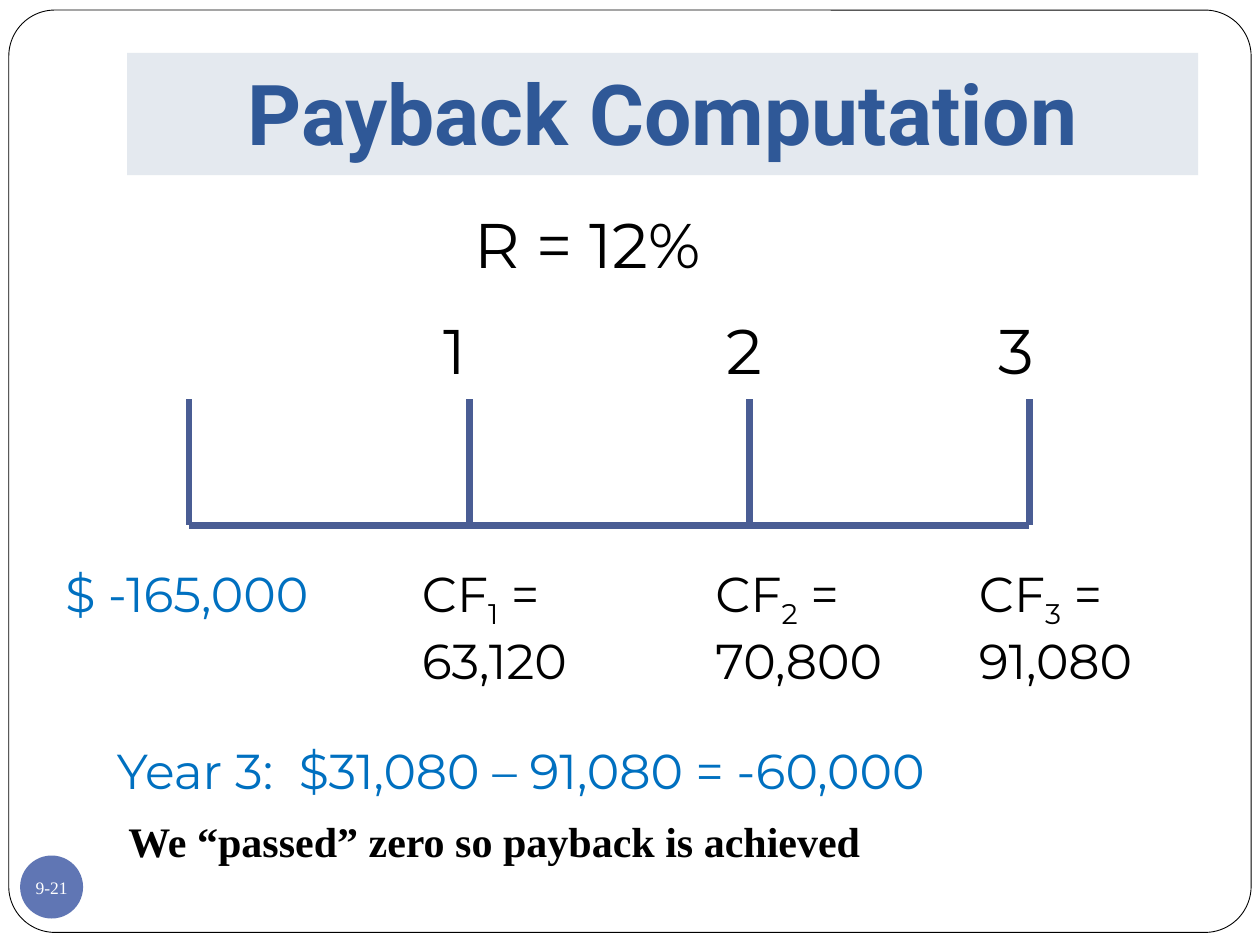
from lxml import etree
from pptx import Presentation
from pptx.dml.color import RGBColor
from pptx.enum.shapes import MSO_CONNECTOR, MSO_SHAPE
from pptx.enum.text import MSO_ANCHOR, PP_ALIGN
from pptx.oxml.ns import qn
from pptx.util import Inches, Pt

COLORS = {
    "white": "FFFFFF", "black": "000000", "badge": "6076B4", "band": "E4E9EF",
    "title": "2F5897", "accent": "0070C0", "axis": "4A5D94",
}
BODY = {"name": "Montserrat", "size": Pt(28)}
LARGE = {"name": "Montserrat", "size": Pt(36)}
TITLE = {"name": "Roboto", "size": Pt(48), "bold": True}
NOTE = {"name": "Times New Roman", "size": Pt(24), "bold": True}
NUMBER = {"name": "Times New Roman", "size": Pt(10)}


def rgb(name):
    return RGBColor.from_string(COLORS[name])


def add_run(p, text, font, color="black", subscript=False):
    r = p.add_run()
    r.text = text
    for key, value in font.items():
        setattr(r.font, key, value)
    r.font.color.rgb = rgb(color)
    if subscript:
        r._r.get_or_add_rPr().set("baseline", "-25000")


def add_text(s, box, text, font, color="black"):
    tf = s.shapes.add_textbox(*map(Inches, box)).text_frame
    tf.word_wrap = True
    p = tf.paragraphs[0]
    if text:
        add_run(p, text, font, color)
    return p


def add_filled(s, kind, box, fill):
    sp = s.shapes.add_shape(kind, *map(Inches, box))
    sp.shadow.inherit = False
    sp.fill.solid()
    sp.fill.fore_color.rgb = rgb(fill)
    sp.line.fill.background()
    return sp


def add_line(s, x1, y1, x2, y2):
    line = s.shapes.add_connector(
        MSO_CONNECTOR.STRAIGHT, *map(Inches, (x1, y1, x2, y2)))
    line.line.color.rgb = rgb("axis")
    line.line.width = Pt(4)
    etree.SubElement(line._element.spPr, qn("a:effectLst"))


def add_frame(s, box):
    sp = add_filled(s, MSO_SHAPE.ROUNDED_RECTANGLE, box, "white")
    sp.adjustments[0] = 0.05
    sp.line.color.rgb = rgb("black")
    sp.line.width = Pt(0.5)


def add_label(s, kind, box, fill, text, font, color, frame):
    """Filled shape with one centred line of text."""
    tf = add_filled(s, kind, box, fill).text_frame
    for key, value in frame.items():
        setattr(tf, key, value)
    p = tf.paragraphs[0]
    p.alignment = PP_ALIGN.CENTER
    add_run(p, text, font, color)


def add_badge(s, box):
    frame = dict.fromkeys(
        ("margin_left", "margin_top", "margin_right", "margin_bottom"), 0)
    frame.update(word_wrap=False, vertical_anchor=MSO_ANCHOR.MIDDLE)
    add_label(s, MSO_SHAPE.OVAL, box, "badge", "9-21", NUMBER, "white", frame)


def add_title(s, box):
    frame = {"word_wrap": True, "vertical_anchor": MSO_ANCHOR.BOTTOM,
             "margin_bottom": Inches(0.1)}
    add_label(s, MSO_SHAPE.RECTANGLE, box, "band", "Payback Computation",
              TITLE, "title", frame)


def add_timeline(s, box):
    left, top, width, height = box
    base = top + height
    # Axis with equally spaced ticks
    add_line(s, left, base, left + width, base)
    for i in range(4):
        x = left + i * width / 3
        add_line(s, x, top, x, base)

    # Initial outlay, then year numbers above and cash flows below
    add_text(s, (left - 1.08, base + 0.25, 2.42, 0.57), "$ -165,000", BODY, "accent")
    years = [  # year x, cash flow x, cash flow width, amount
        (1.92, 1.75, 2.33, "63,120"),
        (4.17, 4.08, 1.67, "70,800"),
        (6.33, 6.17, 1.75, "91,080"),
    ]
    for year, (year_x, flow_x, flow_w, amount) in enumerate(years, 1):
        add_text(s, (left + year_x, top - 0.75, 0.83, 0.71), str(year), LARGE)
        p = add_text(s, (left + flow_x, base + 0.25, flow_w, 1.04), "", BODY)
        add_run(p, "CF", BODY)
        add_run(p, str(year), BODY, subscript=True)
        add_run(p, f" = {amount}", BODY)


def add_conclusion(s, box):
    left, top, width, height = box
    add_text(s, (left, top, width, 0.57),
             "Year 3:  $31,080 – 91,080 = -60,000", BODY, "accent")
    add_text(s, (left + 0.09, top + height - 0.51, width + 0.08, 0.51),
             "We “passed” zero so payback is achieved", NOTE)


def main():
    prs = Presentation()
    prs.slide_width, prs.slide_height = Inches(10), Inches(7.5)
    s = prs.slides.add_slide(prs.slide_layouts[6])
    add_frame(s, (0.07, 0.08, 9.86, 7.32))
    add_badge(s, (0.16, 6.79, 0.5, 0.5))
    add_title(s, (1.01, 0.42, 8.5, 0.97))
    add_text(s, (3.67, 1.58, 3, 0.71), "R = 12%", LARGE)
    add_timeline(s, (1.5, 3.17, 6.67, 1))
    add_conclusion(s, (0.83, 5.83, 8, 1.1))
    prs.save("out.pptx")


if __name__ == "__main__":
    main()
